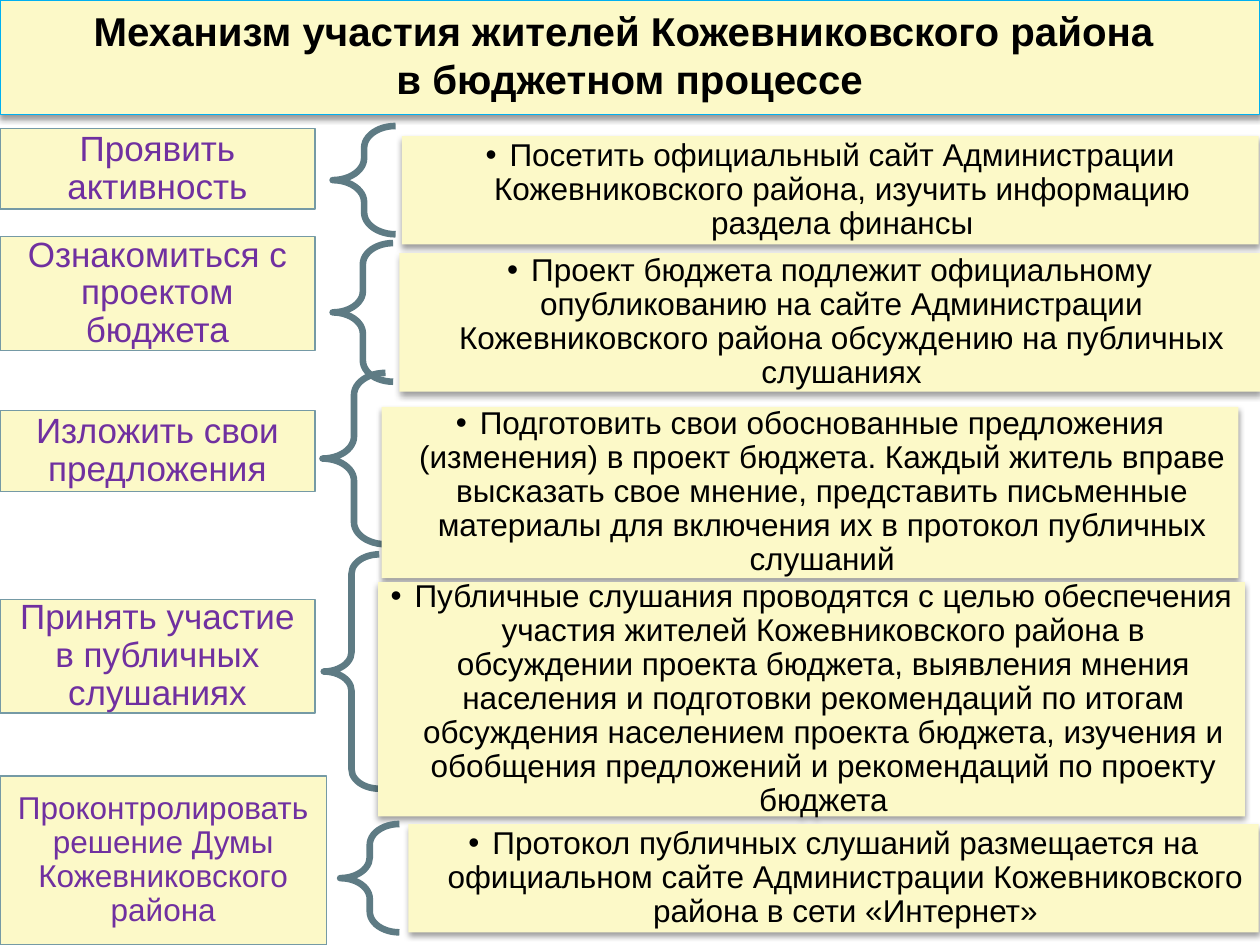
from lxml import etree
from pptx import Presentation
from pptx.dml.color import RGBColor
from pptx.enum.shapes import MSO_SHAPE
from pptx.enum.text import MSO_ANCHOR, PP_ALIGN
from pptx.oxml.ns import qn
from pptx.util import Inches, Pt

RECTANGLE, BRACE = MSO_SHAPE.RECTANGLE, MSO_SHAPE.LEFT_BRACE
TOP, MIDDLE = MSO_ANCHOR.TOP, MSO_ANCHOR.MIDDLE
CENTER = PP_ALIGN.CENTER

FONT = "Arial"
CREAM, BLACK, PURPLE = "FCF9C8", "000000", "7030A0"
TITLE_LINE, STEP_LINE, BRACE_LINE = "00B0F0", "759AA5", "5E7B84"

TITLE = ["Механизм участия жителей Кожевниковского района ", "в бюджетном процессе"]

# step, its size and box; brace box; details and their box (left, top, width, height)
ROWS = [
    ("Проявить активность", 20, (0, 1.02, 2.5, 0.64),
     (2.64, 1, 0.5, 0.86),
     "Посетить официальный сайт Администрации Кожевниковского района, "
     "изучить информацию раздела финансы", (3.19, 1.08, 6.8, 0.86)),
    ("Ознакомиться с проектом бюджета", 20, (0, 1.88, 2.5, 0.9),
     (2.64, 1.93, 0.48, 1.1),
     "Проект бюджета подлежит официальному опубликованию на сайте Администрации "
     "Кожевниковского района обсуждению на публичных слушаниях", (3.17, 2.01, 6.83, 1.1)),
    ("Изложить свои предложения", 20, (0, 3.26, 2.5, 0.64),
     (2.56, 2.96, 0.5, 1.36),
     "Подготовить свои обоснованные предложения (изменения) в проект бюджета. "
     "Каждый житель вправе высказать свое мнение, представить письменные материалы "
     "для включения их в протокол публичных слушаний", (3.03, 3.23, 6.8, 1.36)),
    ("Принять участие в публичных слушаниях", 20, (0, 4.76, 2.5, 0.9),
     (2.57, 4.4, 0.44, 1.86),
     "Публичные слушания проводятся с целью обеспечения участия жителей "
     "Кожевниковского района в обсуждении проекта бюджета, выявления мнения населения "
     "и подготовки рекомендаций по итогам обсуждения населением проекта бюджета, "
     "изучения и обобщения предложений и рекомендаций по проекту бюджета",
     (3, 4.62, 6.88, 1.86)),
    ("Проконтролировать решение Думы Кожевниковского района", 18, (0, 6.16, 2.59, 1.34),
     (2.7, 6.54, 0.47, 0.86),
     "Протокол публичных слушаний размещается на официальном сайте Администрации "
     "Кожевниковского района в сети «Интернет»", (3.24, 6.54, 6.75, 0.86)),
]


def color(value):
    return RGBColor.from_string(value)


def add_outline(page, kind, box, fill=None, line=None, width=0):
    shape = page.shapes.add_shape(kind, *(Inches(length) for length in box))
    shape.shadow.inherit = False
    if fill:
        shape.fill.solid()
        shape.fill.fore_color.rgb = color(fill)
    else:
        shape.fill.background()
    if line:
        shape.line.color.rgb = color(line)
        shape.line.width = Pt(width)
    else:
        shape.line.fill.background()
    return shape


def add_shadow(shape):
    """Put a soft black shadow straight below the shape."""
    effects = shape._element.spPr.find(qn("a:effectLst"))
    shadow = etree.SubElement(effects, qn("a:outerShdw"), blurRad=str(Pt(3.5)),
                              dist=str(Pt(2)), dir="5400000", rotWithShape="0")
    black = etree.SubElement(shadow, qn("a:srgbClr"), val=BLACK)
    etree.SubElement(black, qn("a:alpha"), val="38000")


def write(shape, lines, size, text_color, anchor=MIDDLE, insets=(0.1, 0.05),
          spacing=None, bold=False):
    frame = shape.text_frame
    frame.text = "\n".join(lines)
    frame.word_wrap = True
    frame.vertical_anchor = anchor
    frame.margin_left = frame.margin_right = Inches(insets[0])
    frame.margin_top = frame.margin_bottom = Inches(insets[1])
    for para in frame.paragraphs:
        para.alignment = CENTER
        para.line_spacing = spacing
        for span in para.runs:
            span.font.name = FONT
            span.font.size = Pt(size)
            span.font.bold = bold
            span.font.color.rgb = color(text_color)


def add_bullet(para):
    para.level = 1
    properties = para._p.get_or_add_pPr()
    properties.set("marL", str(Inches(0.19)))
    properties.set("indent", str(-Inches(0.19)))
    etree.SubElement(properties, qn("a:buFont"), typeface=FONT)
    etree.SubElement(properties, qn("a:buChar"), char="•")


def add_title(page, box):
    banner = add_outline(page, RECTANGLE, box, CREAM, TITLE_LINE, 0.5)
    add_shadow(banner)
    write(banner, TITLE, 23, BLACK, anchor=TOP, bold=True)


def add_step(page, box, text, size):
    step = add_outline(page, RECTANGLE, box, CREAM, STEP_LINE, 0.75)
    write(step, [text], size, PURPLE, insets=(0.12, 0.05), spacing=0.9)


def add_brace(page, box):
    brace = add_outline(page, BRACE, box, line=BRACE_LINE, width=3.78)
    brace.adjustments[0] = 0.35
    brace.adjustments[1] = 0.5


def add_details(page, box, text):
    panel = add_outline(page, RECTANGLE, box, CREAM)
    add_shadow(panel)
    write(panel, [text], 18, BLACK, insets=(0.07, 0.07), spacing=0.9)
    add_bullet(panel.text_frame.paragraphs[0])


def main():
    deck = Presentation()
    deck.slide_width, deck.slide_height = Inches(10), Inches(7.5)
    page = deck.slides.add_slide(deck.slide_layouts[6])
    add_title(page, (0, 0, 10, 0.91))
    for step, size, step_box, brace_box, details, details_box in ROWS:
        add_step(page, step_box, step, size)
        add_brace(page, brace_box)
        add_details(page, details_box, details)
    deck.save("out.pptx")


if __name__ == "__main__":
    main()
